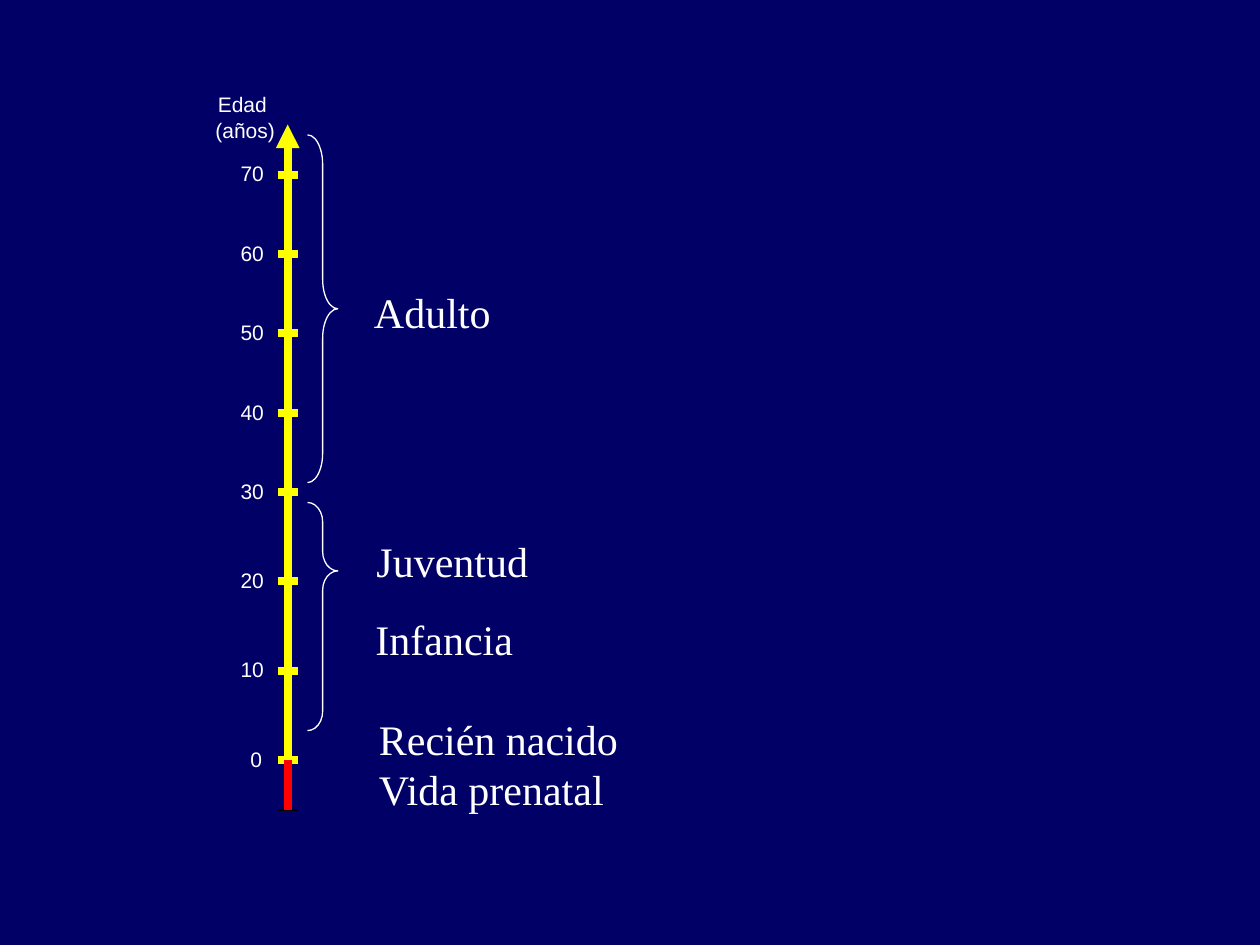
from lxml.etree import SubElement
from pptx import Presentation
from pptx.dml.color import RGBColor as RGB
from pptx.enum.shapes import MSO_CONNECTOR as LINK, MSO_SHAPE as SHAPE
from pptx.enum.text import MSO_AUTO_SIZE as FIT, PP_ALIGN as ALIGN
from pptx.oxml.ns import qn
from pptx.util import Cm, Pt

# Content: lengths in cm
AGES = range(0, 71, 10)
AXIS_TITLE = ["Edad ", "(años)"]
STAGES = [  # name, left, top, width
    ("Adulto", 7.29, 5.66, 2.87),
    ("Juventud", 7.34, 10.67, 3.56),
    ("Infancia", 7.32, 12.24, 3.28),
    ("Recién nacido", 7.39, 14.25, 5.33),
    ("Vida prenatal", 7.39, 15.27, 5.08),
]
BRACES = [  # top, height, curve, point position
    (10.13, 4.6, 0.64, 0.3),
    (2.72, 7.01, 0.97, 0.5),
]

THEME = {
    "background": RGB(0x00, 0x00, 0x66),
    "axis": RGB(0xFF, 0xFF, 0x00),
    "prenatal": RGB(0xFF, 0x00, 0x00),
    "base": RGB(0x00, 0x00, 0x00),
    "ink": RGB(0xFF, 0xFF, 0xFF),
    "thick": Pt(4.5),
    "thin": Pt(0.75),
    "scale": {"name": "Arial", "size": Pt(12)},
    "stage": {"name": "Times New Roman", "size": Pt(24)},
}

# Axis geometry
AXIS_X, AXIS_TOP, BIRTH_Y, PRENATAL_Y = 5.8, 2.51, 15.32, 16.33
TICK_HALF = 0.2
YOUNG_STEP, ADULT_STEP = 1.8, 1.6  # cm per decade, up to 30 and after


def age_y(age):
    return BIRTH_Y - (min(age, 30) * YOUNG_STEP + max(age - 30, 0) * ADULT_STEP) / 10


def add_line(slide, start, end, color, width, arrow=False):
    line = slide.shapes.add_connector(LINK.STRAIGHT, *map(Cm, start + end))
    line.line.color.rgb = THEME[color]
    line.line.width = THEME[width]
    if arrow:
        SubElement(line.line._get_or_add_ln(), qn("a:tailEnd"), type="triangle")
    SubElement(line._element.spPr, qn("a:effectLst"))


def add_tick(slide, y, color, width):
    add_line(slide, (AXIS_X - TICK_HALF, y), (AXIS_X + TICK_HALF, y), color, width)


def add_text(slide, lines, box, style, wrap=False, align=ALIGN.LEFT):
    frame = slide.shapes.add_textbox(*map(Cm, box)).text_frame
    frame.word_wrap = wrap
    frame.auto_size = FIT.SHAPE_TO_FIT_TEXT
    frame.text = "\n".join(lines)
    for paragraph in frame.paragraphs:
        paragraph.alignment = align
        font = paragraph.runs[0].font
        font.color.rgb = THEME["ink"]
        for attribute, value in THEME[style].items():
            setattr(font, attribute, value)


def main():
    deck = Presentation()
    deck.slide_width, deck.slide_height = Cm(25.4), Cm(19.05)
    slide = deck.slides.add_slide(deck.slide_layouts[6])
    slide.background.fill.solid()
    slide.background.fill.fore_color.rgb = THEME["background"]

    # Age axis with ticks and numbers
    for age in AGES:
        y = age_y(age)
        add_tick(slide, y, "axis", "thick")
        left, width = (4.6, 1.0) if age else (4.8, 0.74)
        add_text(slide, [str(age)], (left, y - 0.4, width, 0.76), "scale")
    add_line(slide, (AXIS_X, BIRTH_Y), (AXIS_X, AXIS_TOP), "axis", "thick", arrow=True)

    # Braces over the age ranges
    for top, height, *curve in BRACES:
        brace = slide.shapes.add_shape(
            SHAPE.RIGHT_BRACE, *map(Cm, (6.2, top, 0.61, height)))
        brace.adjustments[0], brace.adjustments[1] = curve
        brace.shadow.inherit = False
        brace.fill.background()
        brace.line.color.rgb = THEME["ink"]
        brace.line.width = THEME["thin"]

    # Prenatal stretch below birth
    add_tick(slide, PRENATAL_Y, "base", "thin")
    add_line(slide, (AXIS_X, PRENATAL_Y), (AXIS_X, BIRTH_Y), "prenatal", "thick")

    # Axis title and life stages
    add_text(slide, AXIS_TITLE, (3.89, 1.73, 2.11, 1.27), "scale", True, ALIGN.CENTER)
    for name, left, top, width in STAGES:
        add_text(slide, [name], (left, top, width, 1.27), "stage")

    deck.save("out.pptx")


if __name__ == "__main__":
    main()
